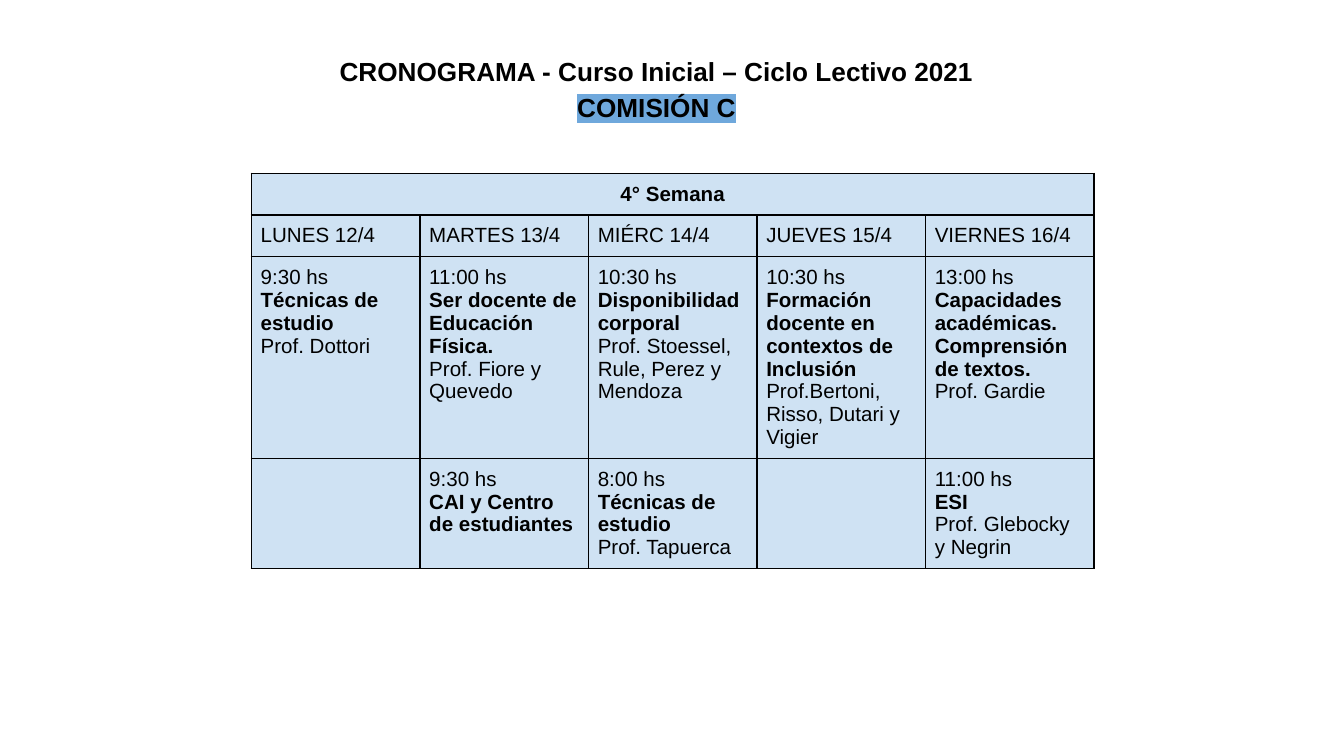
from dataclasses import dataclass

from lxml import etree
from pptx import Presentation
from pptx.dml.color import RGBColor
from pptx.enum.text import MSO_AUTO_SIZE, PP_ALIGN
from pptx.oxml.ns import qn
from pptx.util import Inches, Pt

CENTER = PP_ALIGN.CENTER
LEFT = PP_ALIGN.LEFT
GROW = MSO_AUTO_SIZE.SHAPE_TO_FIT_TEXT


@dataclass(frozen=True)
class Theme:
    font: str = "Arial"
    ink: str = "000000"
    cell: str = "CFE2F3"
    highlight: str = "6FA8DC"
    title_size: int = 14
    table_size: int = 11
    border: int = 1


THEME = Theme()


def write_line(para, text, size, bold, align):
    para.alignment = align
    para.font.name = THEME.font
    para.font.size = Pt(size)
    para.font.bold = bold
    para.font.color.rgb = RGBColor.from_string(THEME.ink)
    span = para.add_run()
    span.text = text
    return span


def add_borders(cell):
    properties = cell._tc.get_or_add_tcPr()
    for position, side in enumerate(("lnL", "lnR", "lnT", "lnB")):
        line = etree.Element(qn(f"a:{side}"), w=str(Pt(THEME.border)))
        fill = etree.SubElement(line, qn("a:solidFill"))
        etree.SubElement(fill, qn("a:srgbClr"), val=THEME.ink)
        properties.insert(position, line)


deck = Presentation()
deck.slide_width = Inches(10)
deck.slide_height = Inches(10 * 9 / 16)
page = deck.slides.add_slide(deck.slide_layouts[6])

days = ["LUNES 12/4", "MARTES 13/4", "MIÉRC 14/4", "JUEVES 15/4", "VIERNES 16/4"]
first_classes = [
    ["9:30 hs", "Técnicas de estudio", "Prof. Dottori"],
    ["11:00 hs", "Ser docente de Educación Física.", "Prof. Fiore y Quevedo"],
    ["10:30 hs", "Disponibilidad corporal", "Prof. Stoessel, Rule, Perez y Mendoza"],
    ["10:30 hs", "Formación docente en contextos de Inclusión", "Prof.Bertoni, Risso, Dutari y Vigier"],
    ["13:00 hs", "Capacidades académicas. Comprensión de textos.", "Prof. Gardie"],
]
second_classes = [
    [],
    ["9:30 hs", "CAI y Centro de estudiantes"],
    ["8:00 hs", "Técnicas de estudio", "Prof. Tapuerca"],
    [],
    ["11:00 hs", "ESI", "Prof. Glebocky", "y Negrin"],
]
schedule = [[["4° Semana"], [], [], [], []], [[day] for day in days], first_classes, second_classes]
row_heights = [0.31, 0.31, 1.5, 0.82]

frame = page.shapes.add_table(
    len(schedule), len(days), Inches(1.87), Inches(1.29), Inches(6.27), Inches(sum(row_heights))
)
table = frame.table
for row, height in zip(table.rows, row_heights):
    row.height = Inches(height)

for row_index, entries in enumerate(schedule):
    is_week = row_index == 0
    for column_index, lines in enumerate(entries):
        cell = table.cell(row_index, column_index)
        cell.margin_left = cell.margin_right = Inches(0.07)
        cell.margin_top = cell.margin_bottom = Inches(0.07)
        cell.fill.solid()
        cell.fill.fore_color.rgb = RGBColor.from_string(THEME.cell)
        add_borders(cell)
        for line_index, text in enumerate(lines):
            paras = cell.text_frame
            para = paras.add_paragraph() if line_index else paras.paragraphs[0]
            is_subject = line_index == 1
            write_line(para, text, THEME.table_size, is_week or is_subject, CENTER if is_week else LEFT)
table.cell(0, 0).merge(table.cell(0, len(days) - 1))

box = page.shapes.add_textbox(Inches(1.81), Inches(0.33), Inches(6.15), Inches(0.64))
heading = box.text_frame
heading.word_wrap = True
heading.auto_size = GROW
titles = ["CRONOGRAMA - Curso Inicial – Ciclo Lectivo 2021", "COMISIÓN C"]
for title_index, text in enumerate(titles):
    para = heading.add_paragraph() if title_index else heading.paragraphs[0]
    para.line_spacing = 1.15
    span = write_line(para, text, THEME.title_size, True, CENTER)

highlight = etree.SubElement(span._r.get_or_add_rPr(), qn("a:highlight"))
etree.SubElement(highlight, qn("a:srgbClr"), val=THEME.highlight)

deck.save("out.pptx")
